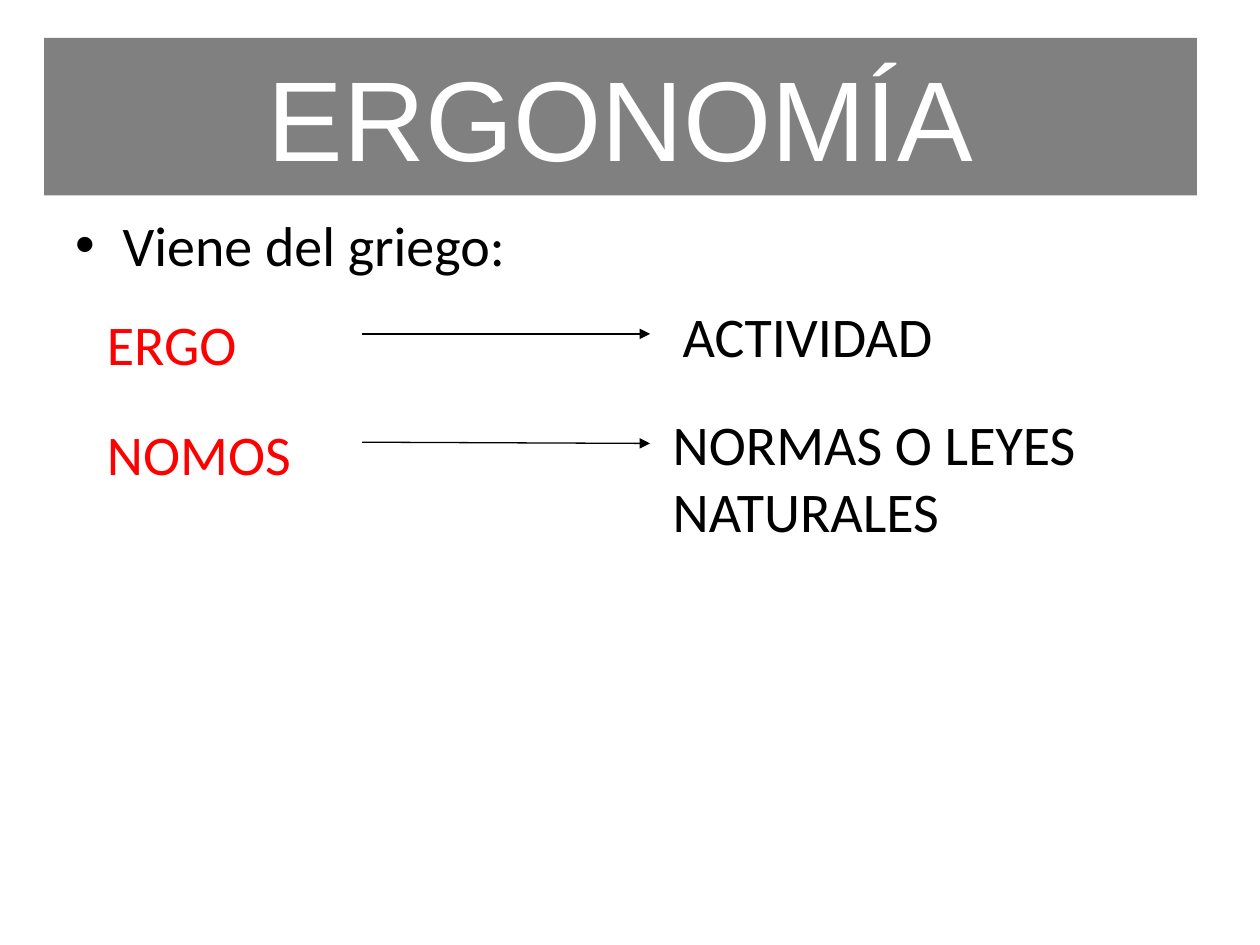
from lxml import etree
from pptx import Presentation
from pptx import util as u
from pptx.dml.color import RGBColor
from pptx.enum import shapes, text
from pptx.oxml.ns import qn

BLACK, RED, WHITE, GRAY = "000000", "FF0000", "FFFFFF", "808080"


def color(value):
    return RGBColor.from_string(value)


class SlideBuilder:
    body = {"name": "Calibri", "size": u.Pt(32)}
    heading = {"name": "Arial", "size": u.Pt(64.8), "bold": False}

    def __init__(self, slide):
        self.slide = slide

    def format_text(self, paragraph, style, fill):
        font = paragraph.runs[0].font
        for name, value in style.items():
            setattr(font, name, value)
        font.color.rgb = color(fill)

    def title(self, words, left, top, width, height):
        shape = self.slide.shapes.title
        box = {"left": left, "top": top, "width": width, "height": height}
        for name, value in box.items():
            setattr(shape, name, u.Pt(value))
        shape.fill.solid()
        shape.fill.fore_color.rgb = color(GRAY)
        frame = shape.text_frame
        frame.text = words
        frame.auto_size = text.MSO_AUTO_SIZE.NONE
        frame.vertical_anchor = text.MSO_ANCHOR.MIDDLE
        paragraph = frame.paragraphs[0]
        paragraph.alignment = text.PP_ALIGN.CENTER
        self.format_text(paragraph, self.heading, WHITE)

    def text(self, words, left, top, width, height, fill=BLACK):
        shape = self.slide.shapes.add_textbox(*map(u.Pt, (left, top, width, height)))
        frame = shape.text_frame
        frame.word_wrap = True
        paragraph = frame.paragraphs[0]
        paragraph.text = words
        self.format_text(paragraph, self.body, fill)
        return paragraph

    def bullet(self, words, left, top, width, height, indent=27):
        properties = self.text(words, left, top, width, height)._p.get_or_add_pPr()
        properties.set("marL", str(u.Pt(indent)))
        properties.set("indent", str(-u.Pt(indent)))
        etree.SubElement(properties, qn("a:buFont"), typeface="Arial")
        etree.SubElement(properties, qn("a:buChar"), char="•")

    def arrow(self, *ends):
        connector = self.slide.shapes.add_connector(
            shapes.MSO_CONNECTOR.STRAIGHT, *map(u.Pt, ends))
        connector.line.width = u.Pt(0.75)
        connector.line.color.rgb = color(BLACK)
        etree.SubElement(connector.line._get_or_add_ln(), qn("a:tailEnd"), type="triangle")
        etree.SubElement(connector._element.spPr, qn("a:effectLst"))


def main():
    presentation = Presentation()
    presentation.slide_width, presentation.slide_height = u.Pt(720), u.Pt(540)
    slide = presentation.slides.add_slide(presentation.slide_layouts[5])
    builder = SlideBuilder(slide)

    # Title band and introduction
    builder.title("ERGONOMÍA", 25.2, 21.6, 658.8, 90)
    builder.bullet("Viene del griego:", 36, 116.64, 648, 356.4)

    # Greek root, arrow and meaning
    builder.text("ERGO", 54, 173.5, 311.8, 45.4, RED)
    builder.arrow(207, 190.8, 371.5, 190.8)
    builder.text("ACTIVIDAD", 383, 168.5, 232.6, 45.4)

    builder.text("NOMOS", 54, 236.2, 147.6, 45.4, RED)
    builder.arrow(207, 252.7, 371.5, 253.4)
    builder.text("NORMAS O LEYES NATURALES", 377.3, 230.4, 320.4, 84.2)

    presentation.save("out.pptx")


if __name__ == "__main__":
    main()
